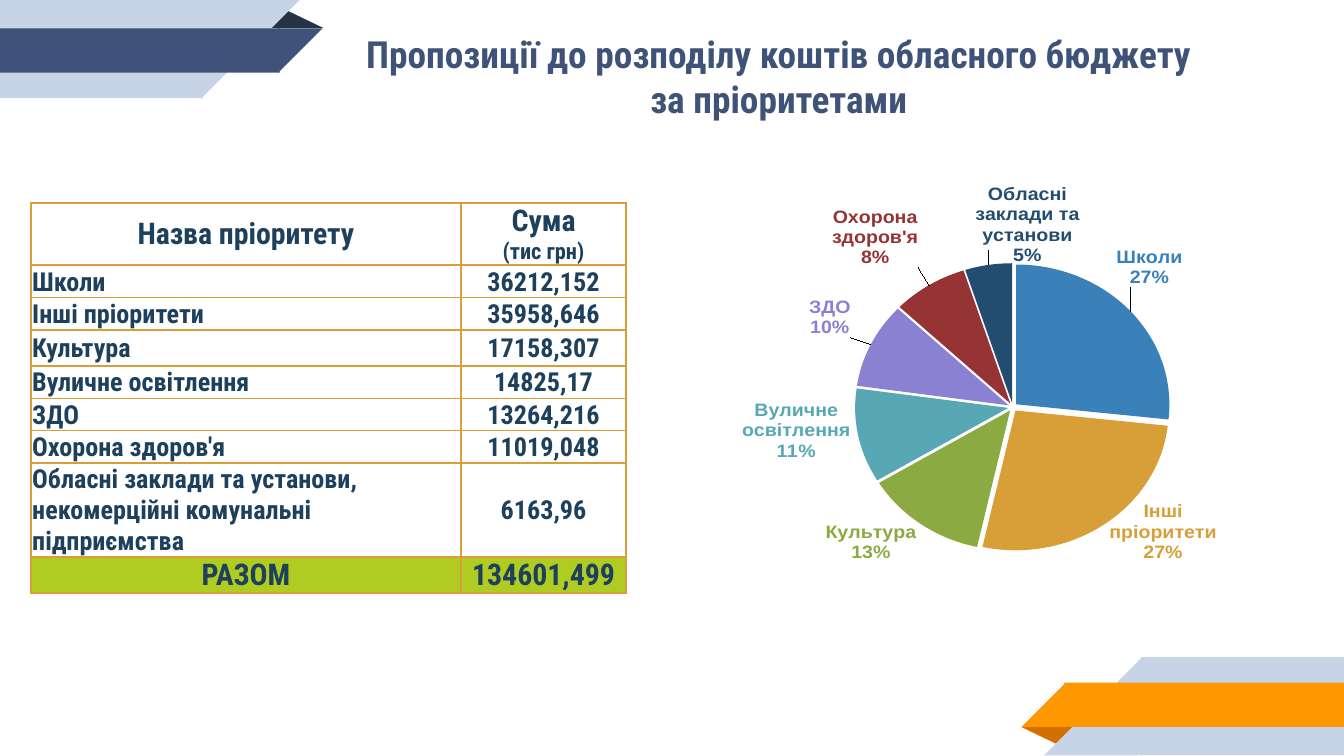
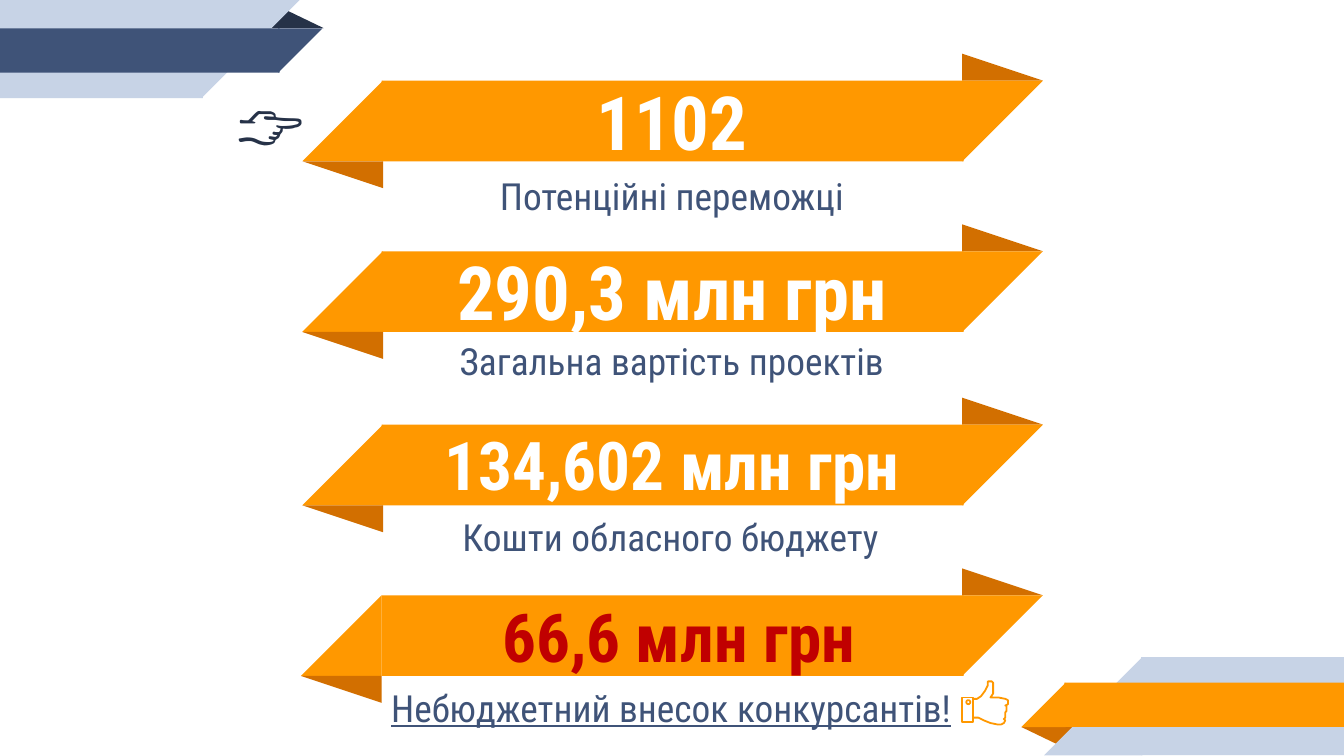
from pptx import Presentation
from pptx import util as u
from pptx.chart.data import CategoryChartData
from pptx.dml.color import RGBColor
from pptx.enum import chart as charts, shapes, text
from pptx.oxml import parse_xml
from pptx.oxml.ns import nsdecls, qn

Inches, Pt = u.Inches, u.Pt
FONT = "Roboto Condensed"
NAVY = RGBColor(0x3F, 0x53, 0x78)
DARK_NAVY = RGBColor(0x26, 0x32, 0x48)
PALE_BLUE = RGBColor(0xC7, 0xD3, 0xE6)
ORANGE = RGBColor(0xFF, 0x98, 0x00)
DARK_ORANGE = RGBColor(0xD2, 0x6F, 0x00)
WHITE = RGBColor(0xFF, 0xFF, 0xFF)
RED = RGBColor(0xC0, 0x00, 0x00)
TABLE_TEXT = RGBColor(0x1D, 0x40, 0x5D)
TOTAL_FILL = RGBColor(0xB0, 0xCC, 0x22)
BORDER = RGBColor(0xD8, 0x9F, 0x39)
SLICES = [RGBColor(0x3A, 0x81, 0xBA), BORDER, RGBColor(0x8B, 0xAB, 0x42),
          RGBColor(0x57, 0xA7, 0xB5), RGBColor(0x8B, 0x81, 0xD2),
          RGBColor(0x96, 0x33, 0x34), RGBColor(0x23, 0x4D, 0x70)]

RECT = shapes.MSO_SHAPE.RECTANGLE
CORNER = shapes.MSO_SHAPE.RIGHT_TRIANGLE
FOLD = shapes.MSO_SHAPE.ISOSCELES_TRIANGLE


def add_piece(slide, kind, box, color, rotation=0, apex=None):
    """Add one flat piece of a ribbon."""
    shape = slide.shapes.add_shape(kind, *map(Inches, box))
    shape.shadow.inherit = False
    shape.fill.solid()
    shape.fill.fore_color.rgb = color
    shape.line.fill.background()
    shape.rotation = rotation
    if apex is None:
        shape.element.spPr.find(qn("a:xfrm")).set("flipH", "1")
    else:
        shape.adjustments[0] = apex
    return shape


def write_text(frame, content, size, color, bold=False, underline=None,
               inset=0.1, align=text.PP_ALIGN.CENTER, after=0):
    """Fill a text frame or a table cell frame with formatted text."""
    frame.text = content
    frame.word_wrap = True
    frame.vertical_anchor = text.MSO_ANCHOR.MIDDLE
    frame.margin_left = frame.margin_right = Inches(inset)
    frame.margin_top = frame.margin_bottom = Inches(inset)
    for paragraph in frame.paragraphs:
        paragraph.alignment = align
        paragraph.space_before = Pt(0)
        paragraph.space_after = Pt(after)
        for run in paragraph.runs:
            run.font.name = FONT
            run.font.size = Pt(size)
            run.font.bold = bold
            run.font.underline = underline
            run.font.color.rgb = color


presentation = Presentation()
presentation.slide_width = Inches(10)
presentation.slide_height = Inches(5.625)

# Slide 1: budget by priority
slide = presentation.slides.add_slide(presentation.slide_layouts[5])

# Corner ribbons, shared by all slides through the master
corner_pieces = [
    (FOLD, (7.6, 5.41, 0.43, 0.14), DARK_ORANGE, 180, 0.324),
    (RECT, (8.49, 4.89, 1.51, 0.73), PALE_BLUE, 0),
    (CORNER, (7.77, 4.89, 0.73, 0.73), PALE_BLUE, 0),
    (RECT, (7.92, 5.08, 2.08, 0.33), ORANGE, 0),
    (CORNER, (7.6, 5.08, 0.33, 0.33), ORANGE, 0),
    (FOLD, (1.98, 0.07, 0.43, 0.14), DARK_NAVY, 0, 0.324),
    (RECT, (0, 0, 1.51, 0.73), PALE_BLUE, 180),
    (CORNER, (1.5, 0, 0.73, 0.73), PALE_BLUE, 180),
    (RECT, (0, 0.21, 2.08, 0.33), NAVY, 180),
    (CORNER, (2.07, 0.21, 0.33, 0.33), NAVY, 180),
]
for number, piece in enumerate(corner_pieces, 101):
    element = add_piece(slide, *piece).element
    element.xpath(".//p:cNvPr")[0].set("id", str(number))
    presentation.slide_master.shapes.element.append(element)

# Title
title = slide.shapes.title
title.left, title.top, title.width, title.height = map(Inches, (1.91, 0.32, 7.77, 0.49))
write_text(title.text_frame, "Пропозиції до розподілу коштів обласного бюджету\nза пріоритетами",
           20, NAVY, bold=True)
title.text_frame.auto_size = text.MSO_AUTO_SIZE.NONE

# Table of amounts
rows = [
    ("Назва пріоритету", "Сума\n(тис грн)"),
    ("Школи", "36212,152"),
    ("Інші пріоритети", "35958,646"),
    ("Культура", "17158,307"),
    ("Вуличне освітлення", "14825,17"),
    ("ЗДО", "13264,216"),
    ("Охорона здоров'я", "11019,048"),
    ("Обласні заклади та установи,\vнекомерційні комунальні підприємства", "6163,96"),
    ("РАЗОМ", "134601,499"),
]
heights = [0.45, 0.21, 0.21, 0.27, 0.21, 0.21, 0.21, 0.21, 0.2]
table = slide.shapes.add_table(len(rows), 2, Inches(0.23), Inches(1.51),
                               Inches(4.43), Inches(sum(heights))).table
table.first_row = table.horz_banding = False
for column, width in zip(table.columns, (3.2, 1.23)):
    column.width = Inches(width)
last = len(rows) - 1
for row_index, values in enumerate(rows):
    table.rows[row_index].height = Inches(heights[row_index])
    for column_index, value in enumerate(values):
        cell = table.cell(row_index, column_index)
        is_label = column_index == 0 and 0 < row_index < last
        write_text(cell.text_frame, value, 16 if row_index in (0, last) else 14,
                   TABLE_TEXT, bold=True,
                   align=text.PP_ALIGN.LEFT if is_label else text.PP_ALIGN.CENTER)
        cell.vertical_anchor = text.MSO_ANCHOR.MIDDLE
        cell.margin_left = cell.margin_right = cell.margin_top = Inches(0.01)
        cell.margin_bottom = 0
        properties = cell._tc.get_or_add_tcPr()
        for side in ("lnL", "lnR", "lnT", "lnB"):
            properties.append(parse_xml(
                f'<a:{side} {nsdecls("a")} w="12700"><a:solidFill>'
                f'<a:srgbClr val="{BORDER}"/></a:solidFill></a:{side}>'))
        if row_index == last:
            cell.fill.solid()
            cell.fill.fore_color.rgb = TOTAL_FILL
        else:
            cell.fill.background()
table.cell(0, 1).text_frame.paragraphs[1].runs[0].font.size = Pt(12)

# Pie chart of shares
chart_data = CategoryChartData()
chart_data.categories = ["Школи", "Інші пріоритети", "Культура", "Вуличне освітлення",
                         "ЗДО", "Охорона здоров'я", "Обласні заклади та установи"]
chart_data.add_series("Series 1", (27, 27, 13, 11, 10, 8, 5))
chart = slide.shapes.add_chart(charts.XL_CHART_TYPE.PIE, Inches(4.91), Inches(1.31),
                               Inches(4.91), Inches(3.09), chart_data).chart
chart.has_legend = chart.has_title = False
chart.font.name, chart.font.size = "Arial", Pt(10)
plot = chart.plots[0]
plot.vary_by_categories = True
series = plot.series[0]
for index, color in enumerate(SLICES):
    point = series.points[index]
    point.format.fill.solid()
    point.format.fill.fore_color.rgb = color
    label = point.data_label
    label.font.name, label.font.size, label.font.bold = "Arial", Pt(10.5), True
    label.font.color.rgb = color
    label.position = charts.XL_LABEL_POSITION.OUTSIDE_END

# Category and percent in the labels, slices pulled apart
for tag, shown in (("showVal", "0"), ("showCatName", "1"), ("showPercent", "1")):
    for element in chart.element.iter(qn("c:" + tag)):
        element.set("val", shown)
for element in list(chart.element.iter(qn("c:showBubbleSize"))):
    element.addnext(parse_xml(f'<c:separator {nsdecls("c")}>\n</c:separator>'))
next(chart.element.iter(qn("c:dPt"))).addprevious(
    parse_xml(f'<c:explosion {nsdecls("c")} val="3"/>'))

# Label offsets as shares of the chart, so that neighbours stay apart
label_offsets = [(-0.03, -0.05), (0, 0), (0, 0), (0, -0.1),
                 (-0.02, -0.01), (-0.01, -0.03), (0.14, -0.02)]
for label, (x, y) in zip(chart.element.iter(qn("c:dLbl")), label_offsets):
    if x or y:
        label.find(qn("c:idx")).addnext(parse_xml(
            f'<c:layout {nsdecls("c")}><c:manualLayout><c:x val="{x}"/>'
            f'<c:y val="{y}"/></c:manualLayout></c:layout>'))

# Fixed plot area
plot_area = next(chart.element.iter(qn("c:plotArea")))
for layout in plot_area.findall(qn("c:layout")):
    plot_area.remove(layout)
bounds = "".join(f'<c:{tag} val="{value}"/>' for tag, value in (
    ("layoutTarget", "inner"), ("xMode", "edge"), ("yMode", "edge"),
    ("x", 0.13), ("y", 0.21), ("w", 0.81), ("h", 0.76)))
plot_area.insert(0, parse_xml(
    f'<c:layout {nsdecls("c")}><c:manualLayout>{bounds}</c:manualLayout></c:layout>'))

# Slide 2: key figures
slide = presentation.slides.add_slide(presentation.slide_layouts[0])

# Ribbons
for left, top in ((2.25, 0.6), (2.25, 1.87), (2.25, 3.16), (2.24, 4.43)):
    add_piece(slide, FOLD, (7.16, top - 0.2, 0.6, 0.2), DARK_ORANGE, 0, 0)
    add_piece(slide, RECT, (2.84, top, 4.33, 0.6), ORANGE, 180)
    add_piece(slide, CORNER, (7.16, top, 0.6, 0.6), ORANGE, 180)
    add_piece(slide, CORNER, (left, top, 0.6, 0.6), ORANGE)
    add_piece(slide, FOLD, (left, top + 0.6, 0.6, 0.2), DARK_ORANGE, 180, 0)

# Figures and captions; the first pair uses the placeholders
figures = [
    ("1102", 40, WHITE, (2.86, 0.61, 4.28, 0.58),
     "Потенційні переможці", (2.86, 1.2, 4.28, 0.51)),
    ("290,3 млн грн", 40, WHITE, (2.86, 1.87, 4.28, 0.58),
     "Загальна вартість проектів", (2.86, 2.46, 4.28, 0.45)),
    ("134,602 млн грн", 36, WHITE, (2.86, 3.16, 4.28, 0.58),
     "Кошти обласного бюджету", (2.84, 3.77, 4.3, 0.45)),
    ("66,6 млн грн", 36, RED, (2.91, 4.44, 4.28, 0.58),
     "Небюджетний внесок конкурсантів!", (2.77, 5.04, 4.45, 0.45)),
]
for index, (figure, size, color, figure_box, caption, caption_box) in enumerate(figures):
    if index == 0:
        pair = [slide.shapes.title, slide.placeholders[1]]
        for shape in pair:  # bring in front of the ribbons
            slide.shapes.element.append(shape.element)
    else:
        pair = [slide.shapes.add_textbox(0, 0, 0, 0) for _ in range(2)]
    for shape, box in zip(pair, (figure_box, caption_box)):
        shape.left, shape.top, shape.width, shape.height = map(Inches, box)
        shape.text_frame.auto_size = text.MSO_AUTO_SIZE.NONE
    write_text(pair[0].text_frame, figure, size, color, bold=True)
    write_text(pair[1].text_frame, caption, 20, NAVY, after=10,
               underline=True if index == 3 else None)

# Thumb icon: cuff, hand and button
cuff = [(7.16, 5.19), (7.16, 5.37), (7.24, 5.37), (7.24, 5.19), (7.16, 5.19)]
hand = [(7.24, 5.34), (7.28, 5.34), (7.32, 5.36), (7.37, 5.38), (7.42, 5.39),
        (7.45, 5.39), (7.47, 5.38), (7.48, 5.36), (7.47, 5.35), (7.48, 5.34),
        (7.48, 5.3), (7.49, 5.29), (7.49, 5.25), (7.48, 5.25), (7.5, 5.24),
        (7.5, 5.21), (7.48, 5.2), (7.43, 5.19), (7.37, 5.19), (7.39, 5.16),
        (7.39, 5.08), (7.38, 5.07), (7.35, 5.07), (7.35, 5.1), (7.33, 5.14),
        (7.3, 5.18), (7.27, 5.2), (7.24, 5.2)]
icon = []
for outline in (cuff, hand):
    points = [(Inches(x), Inches(y)) for x, y in outline]
    builder = slide.shapes.build_freeform(*points[0])
    builder.add_line_segments(points[1:], close=outline is cuff)
    icon.append(builder.convert_to_shape())
icon.append(slide.shapes.add_shape(shapes.MSO_SHAPE.OVAL, Inches(7.19), Inches(5.21),
                                   Inches(0.03), Inches(0.03)))
for shape in icon:
    shape.shadow.inherit = False
    shape.fill.background()
    shape.line.color.rgb = ORANGE
    shape.line.width = Pt(0.96)

# Pointing hand
pointer = slide.shapes.add_textbox(Inches(1.66), Inches(0.56), Inches(1.03), Inches(0.71))
write_text(pointer.text_frame, "👉", 36, DARK_NAVY, align=text.PP_ALIGN.LEFT)
pointer.text_frame.margin_top = pointer.text_frame.margin_bottom = Inches(0.05)
pointer.text_frame.vertical_anchor = text.MSO_ANCHOR.TOP
pointer.text_frame.auto_size = text.MSO_AUTO_SIZE.SHAPE_TO_FIT_TEXT

presentation.save("out.pptx")
